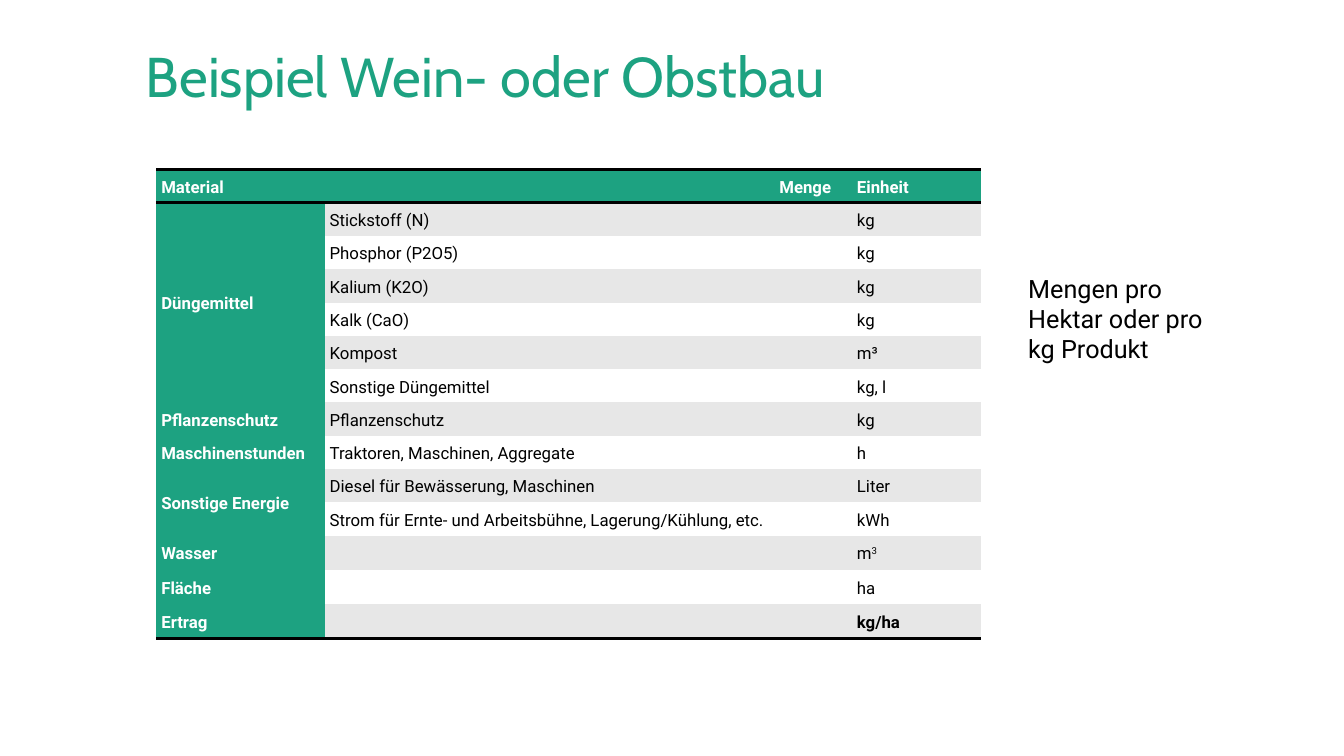
from lxml import etree
from pptx import Presentation
from pptx.dml.color import RGBColor
from pptx.enum.text import MSO_ANCHOR
from pptx.oxml.ns import qn
from pptx.util import Inches, Pt

MIDDLE = MSO_ANCHOR.MIDDLE
TOP = MSO_ANCHOR.TOP

TITLE = "Beispiel Wein- oder Obstbau"
NOTE = "Mengen pro Hektar oder pro kg Produkt"
HEADINGS = ("Material", "", "Menge", "Einheit")
GROUPS = [
    ("Düngemittel", [
        ("Stickstoff (N)", "kg"),
        ("Phosphor (P2O5)", "kg"),
        ("Kalium (K2O)", "kg"),
        ("Kalk (CaO)", "kg"),
        ("Kompost", "m³"),
        ("Sonstige Düngemittel", "kg, l"),
    ]),
    ("Pflanzenschutz", [("Pflanzenschutz", "kg")]),
    ("Maschinenstunden", [("Traktoren, Maschinen, Aggregate", "h")]),
    ("Sonstige Energie", [
        ("Diesel für Bewässerung, Maschinen", "Liter"),
        ("Strom für Ernte- und Arbeitsbühne, Lagerung/Kühlung, etc.", "kWh"),
    ]),
    ("Wasser", [("", "m^3")]),
    ("Fläche", [("", "ha")]),
    ("Ertrag", [("", "kg/ha")]),
]
COLUMN_WIDTHS = (1.67, 4.46, 0.77, 1.28)
ROW_HEIGHT, OPEN_ROW_HEIGHT = 0.32, 0.34
GREEN, GREY, WHITE, BLACK = "1DA281", "E7E7E7", "FFFFFF", "000000"
NO_GRID_STYLE = "{2D5ABB26-0587-4C30-8999-92F81FD0307C}"


def color(code):
    return RGBColor.from_string(code)


def add_text(paragraph, text, size, font, ink, bold=False):
    run = paragraph.add_run()
    run.text = text
    run.font.size = Pt(size)
    run.font.name = font
    run.font.bold = bold
    run.font.color.rgb = color(ink)
    return run


def add_box(slide, area, text, size, font, ink, anchor):
    box = slide.shapes.add_textbox(*map(Inches, area))
    frame = box.text_frame
    frame.word_wrap = True
    frame.vertical_anchor = anchor
    add_text(frame.paragraphs[0], text, size, font, ink)
    return frame.paragraphs[0]


def add_border(cell, side):
    line = etree.SubElement(cell._tc.get_or_add_tcPr(), qn(f"a:ln{side}"), w=str(Pt(2)))
    fill = etree.SubElement(line, qn("a:solidFill"))
    etree.SubElement(fill, qn("a:srgbClr"), val=BLACK)


def fill_cell(cell, text, background, ink, bold=False, borders=""):
    for side in borders:
        add_border(cell, side)
    cell.fill.solid()
    cell.fill.fore_color.rgb = color(background)
    cell.margin_left = cell.margin_right = Inches(0.05)
    cell.margin_top = cell.margin_bottom = Inches(0.05)
    cell.vertical_anchor = MIDDLE
    paragraph = cell.text_frame.paragraphs[0]
    paragraph.line_spacing = 1.15
    paragraph.space_after = Pt(8)
    base, _, exponent = text.partition("^")
    if base:
        add_text(paragraph, base, 12, "Roboto", ink, bold)
    if exponent:
        raised = add_text(paragraph, exponent, 12, "Roboto", ink, bold)
        raised.font._element.set("baseline", "30000")
    if not text:
        etree.SubElement(paragraph._p, qn("a:endParaRPr"), sz="1200")


def add_materials(slide):
    row_count = 1 + sum(len(items) for _, items in GROUPS)
    frame = slide.shapes.add_table(
        row_count, len(COLUMN_WIDTHS), Inches(1.55), Inches(1.68),
        Inches(sum(COLUMN_WIDTHS)), Inches(ROW_HEIGHT * row_count))
    table = frame.table
    table.horz_banding = False
    table.first_row = False
    table._tbl.tblPr.find(qn("a:tableStyleId")).text = NO_GRID_STYLE
    for column, width in zip(table.columns, COLUMN_WIDTHS):
        column.width = Inches(width)
    table.rows[0].height = Inches(ROW_HEIGHT)
    for index, heading in enumerate(HEADINGS):
        fill_cell(table.cell(0, index), heading, GREEN, WHITE, True, "TB")

    row = 1
    for group, items in GROUPS:
        first = row
        for material, unit in items:
            last_row = row == row_count - 1
            borders = "B" if last_row else ""
            band = GREY if row % 2 else WHITE
            table.rows[row].height = Inches(ROW_HEIGHT if material else OPEN_ROW_HEIGHT)
            fill_cell(table.cell(row, 0), group if row == first else "",
                      GREEN, WHITE, True, borders)
            for index, text in enumerate((material, "", unit), start=1):
                fill_cell(table.cell(row, index), text, band, BLACK, last_row, borders)
            row += 1
        if len(items) > 1:
            table.cell(first, 0).merge(table.cell(row - 1, 0))


def main():
    deck = Presentation()
    deck.slide_width, deck.slide_height = Inches(13.33), Inches(7.5)
    slide = deck.slides.add_slide(deck.slide_layouts[6])
    title = add_box(slide, (1.35, 0.45, 8.17, 0.68), TITLE, 40, "Cabin", GREEN, MIDDLE)
    title.line_spacing = 0.9
    add_materials(slide)
    add_box(slide, (10.1, 2.66, 1.97, 1.01), NOTE, 18, "Roboto", BLACK, TOP)
    deck.save("out.pptx")


if __name__ == "__main__":
    main()
